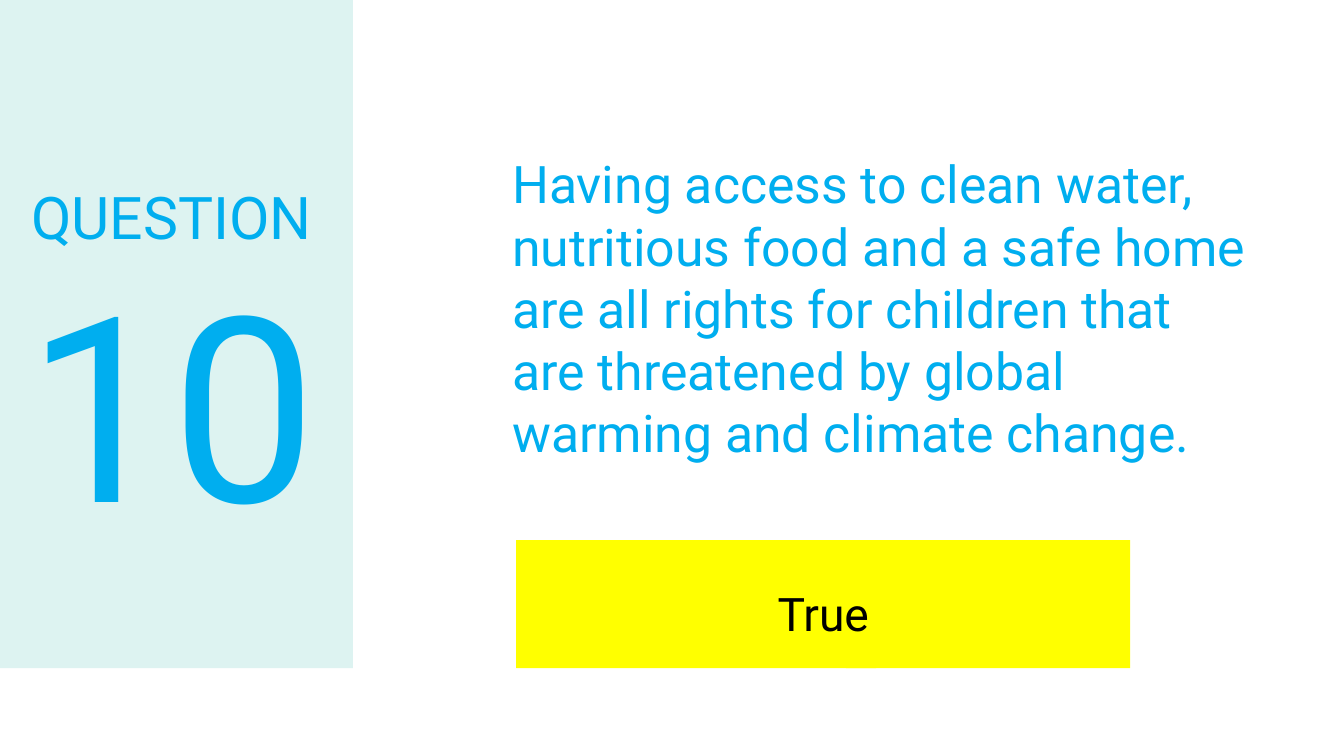
from pptx import Presentation
from pptx.dml.color import RGBColor
from pptx.enum.shapes import MSO_SHAPE
from pptx.enum.text import MSO_ANCHOR, MSO_AUTO_SIZE, PP_ALIGN
from pptx.util import Inches, Pt

RECT = MSO_SHAPE.RECTANGLE
TOP, MIDDLE = MSO_ANCHOR.TOP, MSO_ANCHOR.MIDDLE
LEFT, CENTER = PP_ALIGN.LEFT, PP_ALIGN.CENTER
FIXED = MSO_AUTO_SIZE.NONE
FONT = "Roboto"
COLORS = {"blue": "00AEEF", "mint": "DDF3F1", "yellow": "FFFF00", "black": "000000"}


def color(name):
    return RGBColor.from_string(COLORS[name])


def add_rect(slide, x, y, w, h, fill):
    rect = slide.shapes.add_shape(RECT, Inches(x), Inches(y), Inches(w), Inches(h))
    rect.shadow.inherit = False
    rect.fill.solid()
    rect.fill.fore_color.rgb = color(fill)
    rect.line.fill.background()


def write(shape, text, size, ink, align=LEFT, anchor=TOP, inset=0.1, spacing=1.0):
    frame = shape.text_frame
    frame.text = text
    frame.word_wrap = True
    frame.auto_size = FIXED
    frame.vertical_anchor = anchor
    frame.margin_left = frame.margin_right = Inches(inset)
    frame.margin_top = frame.margin_bottom = Inches(inset)
    line = frame.paragraphs[0]
    line.alignment = align
    line.line_spacing = spacing
    font = line.runs[0].font
    font.name = FONT
    font.size = Pt(size)
    font.color.rgb = color(ink)


def add_text(slide, x, y, w, h, *words, **style):
    box = slide.shapes.add_textbox(Inches(x), Inches(y), Inches(w), Inches(h))
    write(box, *words, **style)


def add_prompt(slide, x, y, w, h, text):
    title = slide.shapes.title
    title.left, title.top = Inches(x), Inches(y)
    title.width, title.height = Inches(w), Inches(h)
    write(title, text, 37, "blue")


def add_panel(slide, x, y, w, h, label, number):
    add_rect(slide, x, y, w, h, "mint")
    style = {"anchor": MIDDLE, "inset": 0.05, "spacing": 0.9}
    add_text(slide, x + 0.26, y + 1.68, 3.34, 1.01, label, 42, "blue", **style)
    add_text(slide, x + 0.18, y + 2.59, 3.05, 3.12, number, 185, "blue",
             align=CENTER, **style)


def add_answer(slide, x, y, w, h, text):
    for shift, width in ((0, 3.57), (3.27, w - 3.27)):
        add_rect(slide, x + shift, y, width, h, "yellow")
    add_text(slide, x, y + 0.26, w, 0.76, text, 33, "black",
             align=CENTER, spacing=1.15)


def main():
    deck = Presentation()
    deck.slide_width, deck.slide_height = Inches(13.33), Inches(7.5)
    slide = deck.slides.add_slide(deck.slide_layouts[5])
    add_prompt(slide, 4.98, 1.41, 7.48, 3.32,
               "Having access to clean water, nutritious food and a safe home "
               "are all rights for children that are threatened by global "
               "warming and climate change.")
    add_panel(slide, 0, 0, 3.5, 6.63, "QUESTION", "10")
    add_answer(slide, 5.12, 5.36, 6.09, 1.27, "True")
    deck.save("out.pptx")


if __name__ == "__main__":
    main()
